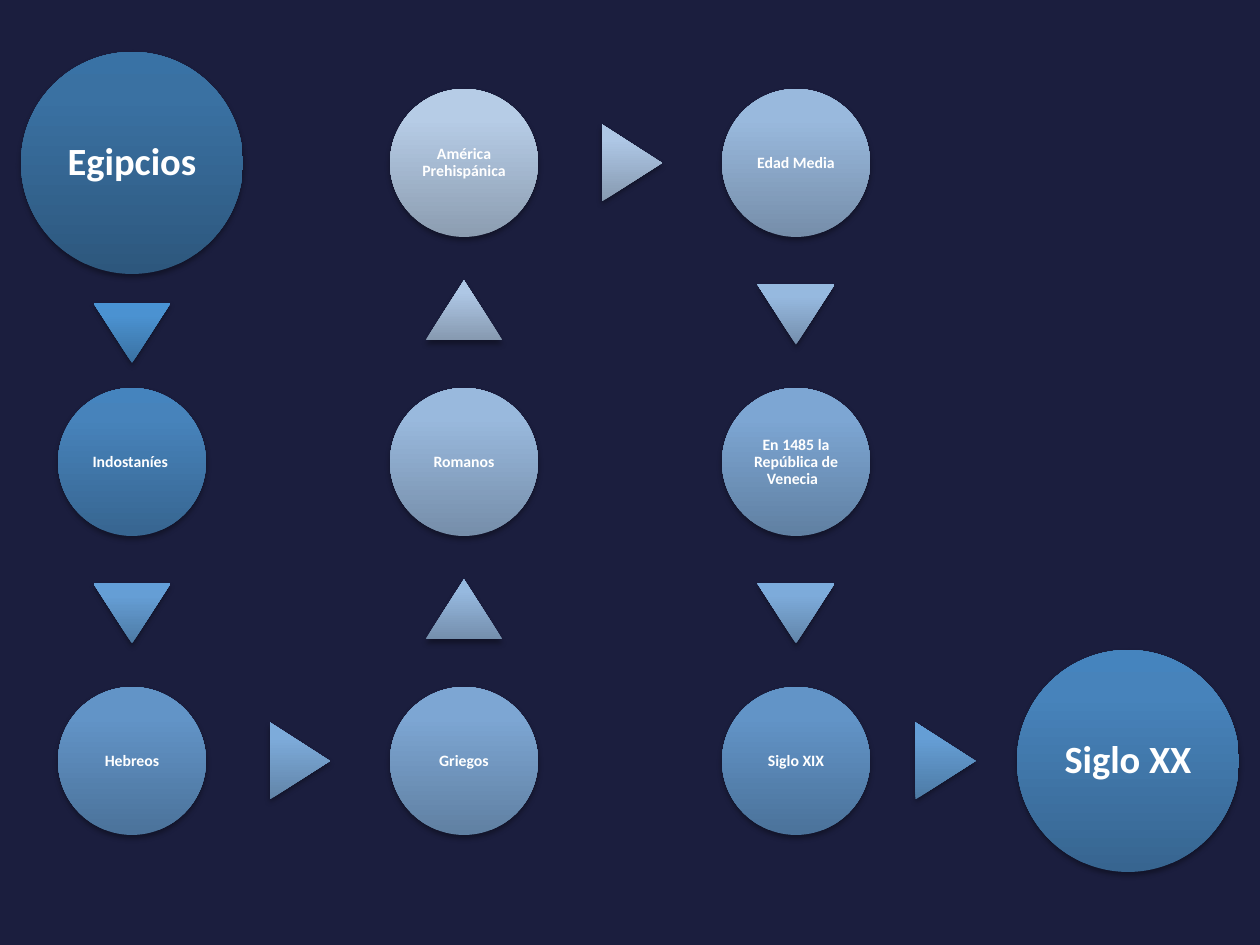
from lxml import etree
from pptx import Presentation
from pptx.dml.color import RGBColor
from pptx.enum.shapes import MSO_SHAPE
from pptx.enum.text import MSO_ANCHOR, PP_ALIGN
from pptx.oxml.ns import qn
from pptx.util import Pt

PX = 914400 / 126
OVAL, ARROW = MSO_SHAPE.OVAL, MSO_SHAPE.ISOSCELES_TRIANGLE
MIDDLE, CENTER = MSO_ANCHOR.MIDDLE, PP_ALIGN.CENTER
LEFT, TOP, COL, ROW = 132, 163, 332, 299
BIG, SMALL = 222, 148
WIDE, HIGH, PUSH = 77, 60, 2

# column, row, diameter, label
STEPS = [
    (0, 0, BIG, "Egipcios"),
    (0, 1, SMALL, "Indostaníes "),
    (0, 2, SMALL, "Hebreos"),
    (1, 2, SMALL, "Griegos"),
    (1, 1, SMALL, "Romanos"),
    (1, 0, SMALL, "América Prehispánica"),
    (2, 0, SMALL, "Edad Media"),
    (2, 1, SMALL, "En 1485 la República de Venecia  "),
    (2, 2, SMALL, "Siglo XIX"),
    (3, 2, BIG, "Siglo XX"),
]
# gradient colours from bottom to top; the tones fade, then return
DISCS = [
    ("2D577D", "3A71A2", "3972A5"),
    ("376590", "4783BB", "4584BE"),
    ("4B729A", "6294C7", "6095CA"),
    ("6080A2", "7DA6D3", "7CA7D5"),
    ("768EAA", "99B9DD", "99B9DF"),
    ("8C9DB1", "B6CCE6", "B6CDE8"),
]
HEADS = [
    ("3A71A1", "4B92D1", "4993D4"),
    ("4D7AA4", "659ED5", "639FD9"),
    ("6184A8", "7DABDA", "7CACDD"),
    ("748EAC", "96B9DF", "95BAE2"),
    ("8699B0", "AEC7E5", "AEC8E7"),
]
TURN = {(0, -1): 0, (1, 0): 90, (0, 1): 180}


def px(n):
    return round(n * PX)


def rgb(code):
    return RGBColor.from_string(code)


def node(up, tag, **attrs):
    """Append a DrawingML element to a parent."""
    return etree.SubElement(up, qn("a:" + tag), {k: str(v) for k, v in attrs.items()})


def shade(shape, tone):
    """Give a three-stop upward gradient and a soft shadow below."""
    shape.line.fill.background()
    shape.fill.gradient()
    grad = shape.element.spPr.find(qn("a:gradFill"))
    grad.set("rotWithShape", "0")
    stops = grad.find(qn("a:gsLst"))
    for old in list(stops):
        stops.remove(old)
    for pos, code in zip((0, 80, 100), tone):
        node(node(stops, "gs", pos=pos * 1000), "srgbClr", val=code)
    shape.fill.gradient_angle = 90
    shape.shadow.inherit = False
    glow = shape.element.spPr.find(qn("a:effectLst"))
    drop = node(glow, "outerShdw", blurRad=Pt(3.1), dist=Pt(1.8),
                dir=5400000, rotWithShape=0)
    node(node(drop, "srgbClr", val="000000"), "alpha", val=35000)


def place(slide, kind, x, y, w, h, tone):
    """Add a shaded shape centred on x, y."""
    shape = slide.shapes.add_shape(kind, px(x - w / 2), px(y - h / 2), px(w), px(h))
    shade(shape, tone)
    return shape


def label(shape, text, size, pad):
    frame = shape.text_frame
    look = {"word_wrap": True, "vertical_anchor": MIDDLE, "margin_left": pad,
            "margin_right": pad, "margin_top": pad, "margin_bottom": pad}
    for name, value in look.items():
        setattr(frame, name, value)
    para = frame.paragraphs[0]
    para.alignment, para.line_spacing = CENTER, 0.9
    run = para.add_run()
    run.text = text
    for name, value in {"name": "Calibri", "size": Pt(size), "bold": True}.items():
        setattr(run.font, name, value)
    run.font.color.rgb = rgb("FFFFFF")


def disc(slide, step, tone):
    col, row, size, text = step
    shape = place(slide, OVAL, LEFT + col * COL, TOP + row * ROW, size, size, tone)
    large = size == BIG
    label(shape, text, 22 if large else 9, px(4 if large else 1))


def head(slide, start, end, tone):
    """Put an arrowhead midway between the facing edges of two discs."""
    dx, dy = end[0] - start[0], end[1] - start[1]
    shift = (start[2] - end[2]) / 4 + PUSH
    x = LEFT + (start[0] + end[0]) * COL / 2 + dx * shift
    y = TOP + (start[1] + end[1]) * ROW / 2 + dy * shift
    place(slide, ARROW, x, y, WIDE, HIGH, tone).rotation = TURN[dx, dy]


def main():
    deck = Presentation()
    deck.slide_width, deck.slide_height = px(1260), px(945)
    slide = deck.slides.add_slide(deck.slide_layouts[6])
    back = slide.background.fill
    back.solid()
    back.fore_color.rgb = rgb("1B1E3E")
    discs = DISCS + DISCS[-2:0:-1]
    heads = HEADS + HEADS[:0:-1]
    for step, tone in zip(STEPS, discs):
        disc(slide, step, tone)
    for start, end, tone in zip(STEPS, STEPS[1:], heads):
        head(slide, start, end, tone)
    deck.save("out.pptx")


if __name__ == "__main__":
    main()
